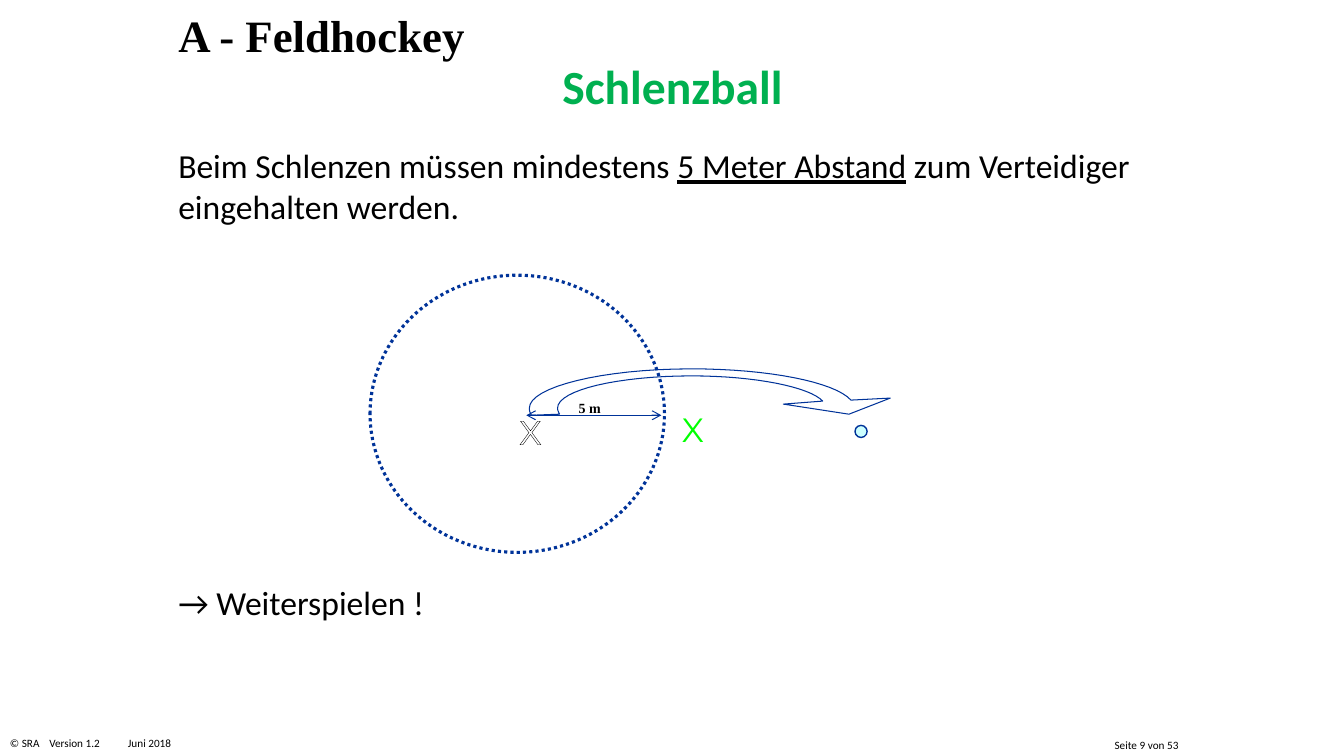
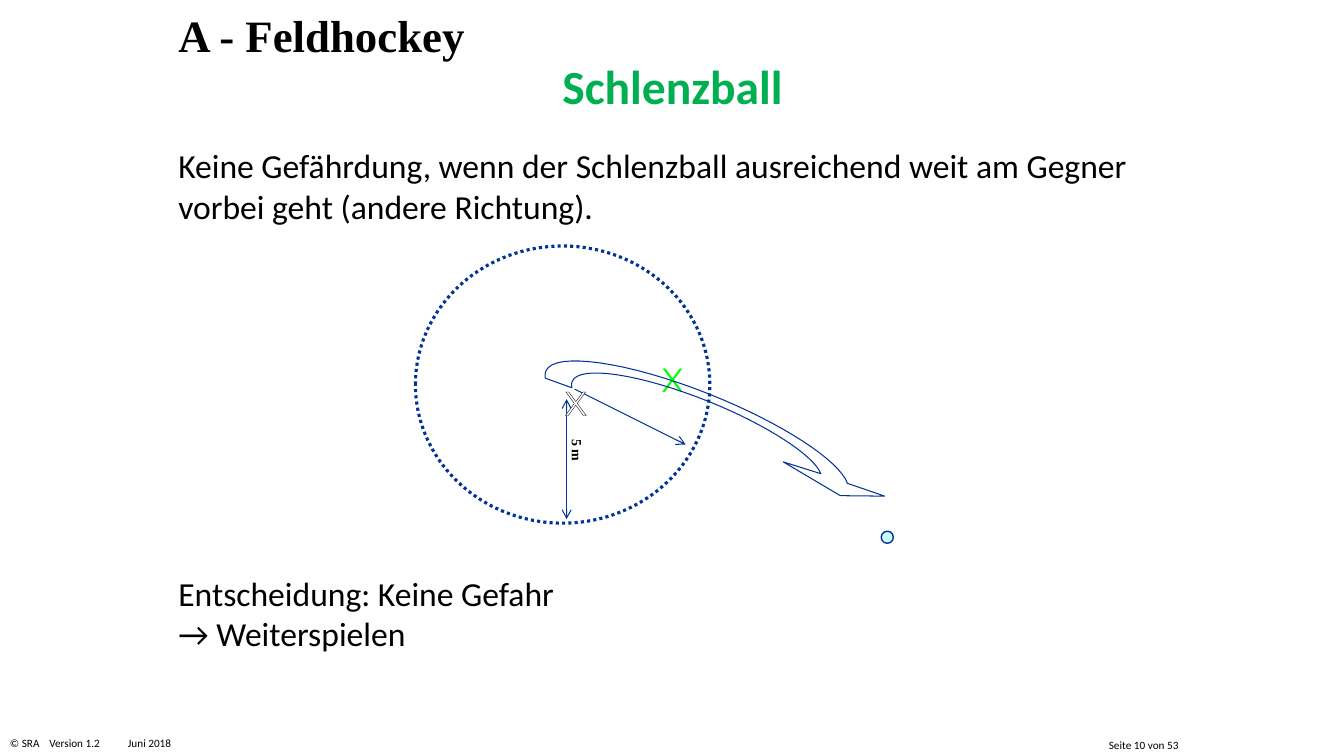
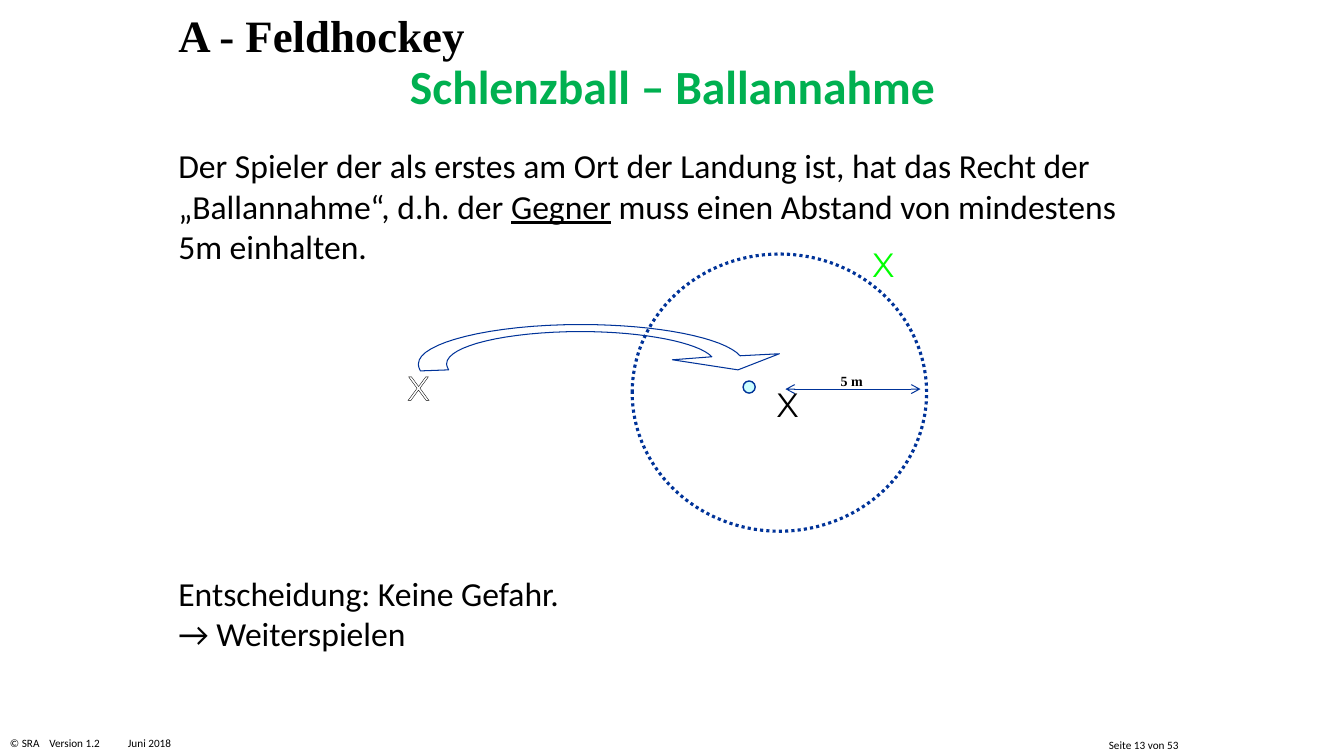
"""Build three field hockey slides about the Schlenzball rule."""
from math import cos, radians, sin

from lxml.etree import SubElement
from pptx import Presentation
from pptx.dml.color import RGBColor
from pptx.enum.dml import MSO_LINE
from pptx.enum.shapes import MSO_CONNECTOR, MSO_SHAPE
from pptx.enum.text import MSO_ANCHOR, PP_ALIGN
from pptx.oxml.ns import qn
from pptx.util import Inches, Pt

WIDTH, HEIGHT = 13.33, 7.5
LEFT, COLUMN = 1.67, 10
COLORS = {"ink": "000000", "title": "00B050", "line": "003399",
          "ball": "CCFFFF", "thrower": "FFFFFF", "opponent": "00FF00"}
STYLES = {
    "chapter": {"name": "Times New Roman", "size": 32, "bold": True, "color": "ink"},
    "title": {"name": "Calibri", "size": 34, "bold": True, "color": "title"},
    "body": {"name": "Calibri", "size": 24, "color": "ink"},
    "footer": {"name": "Calibri", "size": 8, "color": "ink"},
    "distance": {"name": "Times New Roman", "size": 10, "bold": True, "color": "ink"},
    "player": {"name": "Montserrat", "size": 24},
}
CHAPTER = "A - Feldhockey"
FOOTER = "© SRA\tVersion 1.2\tJuni 2018"
FOOTER_TABS = (0.39, 1.17)
PAGE_COUNT = 53
CIRCLE = (2.92, 2.75)
PLAYER = (0.19, 0.2)
LABEL = (0.55, 0.27)
BALL = 0.12
FLIGHT_CENTER = (1.61, 0.39)
FLIGHT_START = (2.91, 0.32)
FLIGHT = [
    (2.78, 0.18, 2.24, 0.07, 1.61, 0.07),
    (0.88, 0.07, 0.28, 0.21, 0.28, 0.39),
    (0.28, 0.41, 0.29, 0.43, 0.3, 0.45),
    (0.02, 0.46),
    (0.01, 0.44, 0, 0.42, 0, 0.39),
    (0, 0.18, 0.72, 0, 1.61, 0),
    (2.37, 0, 3.03, 0.13, 3.19, 0.31),
    (3.58, 0.29), (3.17, 0.45), (2.52, 0.35),
]
CURVE_STEPS = 16

SLIDES = [
    {"number": 9, "title": "Schlenzball",
     "rule": "Beim Schlenzen müssen mindestens _5 Meter Abstand_ zum Verteidiger "
             "eingehalten werden.",
     "decision": "→ Weiterspielen !", "decision_top": 5.72,
     "circle": (3.67, 2.73), "flight": (5.25, 3.66, 0), "ball": (8.48, 4.22),
     "players": [("thrower", 5.06, 4.03), ("opponent", 6.67, 4.01)],
     "label": (5.64, 3.91, 0),
     "arrows": [(5.22, 4.12, 6.56, 4.12, True)]},
    {"number": 10, "title": "Schlenzball",
     "rule": "Keine Gefährdung, wenn der Schlenzball ausreichend weit am Gegner "
             "vorbei geht (andere Richtung).",
     "decision": "Entscheidung: Keine Gefahr\n→ Weiterspielen", "decision_top": 5.63,
     "circle": (4.12, 2.44), "flight": (5.3, 3.89, 21.9), "ball": (8.74, 5.27),
     "players": [("thrower", 5.51, 3.74), ("opponent", 6.47, 3.51)],
     "label": (5.45, 4.4, 90),
     "arrows": [(5.62, 3.96, 5.62, 5.15, True), (5.7, 3.86, 6.8, 4.41, False)]},
    {"number": 13, "title": "Schlenzball – Ballannahme",
     "rule": "Der Spieler der als erstes am Ort der Landung ist, hat das Recht der "
             "„Ballannahme“, d.h. der _Gegner_ muss einen Abstand von mindestens "
             "5m einhalten.",
     "decision": "Entscheidung: Keine Gefahr.\n→ Weiterspielen", "decision_top": 5.63,
     "circle": (6.27, 2.52), "flight": (4.15, 3.22, 0), "ball": (7.37, 3.78),
     "players": [("thrower", 3.95, 3.59), ("ink", 7.61, 3.76), ("opponent", 8.56, 2.37)],
     "label": (8.24, 3.65, 0),
     "arrows": [(7.79, 3.86, 9.13, 3.86, True)]},
]


def rgb(name):
    return RGBColor.from_string(COLORS[name])


def set_font(font, style):
    for key, value in style.items():
        if key == "color":
            font.color.rgb = rgb(value)
        else:
            setattr(font, key, Pt(value) if key == "size" else value)


def add_text(page, text, area, style, align=PP_ALIGN.LEFT, wrap=True, tabs=()):
    box = page.shapes.add_textbox(*map(Inches, area))
    box.text_frame.word_wrap = wrap
    para = box.text_frame.paragraphs[0]
    para.alignment = align
    if tabs:
        stops = SubElement(para._p.get_or_add_pPr(), qn("a:tabLst"))
        for stop in tabs:
            SubElement(stops, qn("a:tab"), pos=str(Inches(stop)), algn="l")
    for row, line in enumerate(text.split("\n")):
        if row:
            para.add_line_break()
        for index, part in enumerate(line.split("_")):
            span = para.add_run()
            span.text = part
            set_font(span.font, STYLES[style])
            if index % 2:
                span.font.underline = True
    return box


def add_player(page, color, left, top):
    box = add_text(page, "X", (left, top, *PLAYER), "player", wrap=False)
    span = box.text_frame.paragraphs[0].runs[0]
    outline = SubElement(span._r.get_or_add_rPr(), qn("a:ln"), w=str(Pt(0.75)))
    span._r.rPr.insert(0, outline)
    fill = SubElement(outline, qn("a:solidFill"))
    SubElement(fill, qn("a:srgbClr"), val=COLORS["ink"])
    span.font.color.rgb = rgb(color)


def style_shape(shape, weight, fill=None):
    shape.shadow.inherit = False
    shape.line.color.rgb = rgb("line")
    shape.line.width = Pt(weight)
    if fill:
        shape.fill.solid()
        shape.fill.fore_color.rgb = rgb(fill)
    else:
        shape.fill.background()
    return shape


def add_oval(page, left, top, width, height, weight, fill=None):
    oval = page.shapes.add_shape(MSO_SHAPE.OVAL, *map(Inches, (left, top, width, height)))
    return style_shape(oval, weight, fill)


def add_arrow(page, x1, y1, x2, y2, both):
    arrow = page.shapes.add_connector(MSO_CONNECTOR.STRAIGHT, *map(Inches, (x1, y1, x2, y2)))
    arrow.line.color.rgb = rgb("line")
    arrow.line.width = Pt(0.75)
    for end in ("headEnd", "tailEnd") if both else ("tailEnd",):
        SubElement(arrow.line._get_or_add_ln(), qn(f"a:{end}"), type="arrow")
    SubElement(arrow._element.spPr, qn("a:effectLst"))


def flight_points():
    points = [FLIGHT_START]
    for segment in FLIGHT:
        if len(segment) == 2:
            points.append(segment)
            continue
        controls = [points[-1], segment[:2], segment[2:4], segment[4:]]
        for step in range(1, CURVE_STEPS + 1):
            t = step / CURVE_STEPS
            weights = ((1 - t) ** 3, 3 * t * (1 - t) ** 2, 3 * t * t * (1 - t), t ** 3)
            points.append(tuple(sum(w * c[axis] for w, c in zip(weights, controls))
                                for axis in (0, 1)))
    return points


def add_flight(page, left, top, angle):
    turn = radians(angle)
    center_x, center_y = FLIGHT_CENTER
    points = []
    for x, y in flight_points():
        dx, dy = x - center_x, y - center_y
        points.append((Inches(left + center_x + dx * cos(turn) - dy * sin(turn)),
                       Inches(top + center_y + dx * sin(turn) + dy * cos(turn))))
    builder = page.shapes.build_freeform(*points[0])
    builder.add_line_segments(points[1:], close=True)
    style_shape(builder.convert_to_shape(), 0.75)


def add_frame(page, content):
    add_text(page, FOOTER, (0, 7.26, 1.81, 0.24), "footer", wrap=False, tabs=FOOTER_TABS)
    number = add_text(page, f"Seite {content['number']} von {PAGE_COUNT}",
                      (10.38, 7.29, 1.39, 0.21), "footer", PP_ALIGN.RIGHT)
    frame = number.text_frame
    frame.vertical_anchor = MSO_ANCHOR.MIDDLE
    frame.margin_left = frame.margin_right = Inches(0.08)
    frame.margin_top = frame.margin_bottom = Inches(0.04)
    add_text(page, CHAPTER, (LEFT, 0.03, COLUMN, 0.64), "chapter")
    add_text(page, content["title"], (LEFT, 0.52, COLUMN, 0.67), "title", PP_ALIGN.CENTER)


def add_diagram(page, content):
    circle = add_oval(page, *content["circle"], *CIRCLE, 2.25)
    circle.line.dash_style = MSO_LINE.ROUND_DOT
    for arrow in content["arrows"]:
        add_arrow(page, *arrow)
    left, top, angle = content["label"]
    add_text(page, "5 m", (left, top, *LABEL), "distance").rotation = angle
    for player in content["players"]:
        add_player(page, *player)
    add_flight(page, *content["flight"])
    add_oval(page, *content["ball"], BALL, BALL, 1, "ball")


def main():
    deck = Presentation()
    deck.slide_width, deck.slide_height = Inches(WIDTH), Inches(HEIGHT)
    for content in SLIDES:
        page = deck.slides.add_slide(deck.slide_layouts[6])
        add_frame(page, content)
        add_text(page, content["rule"], (LEFT, 1.39, COLUMN, 0.91), "body")
        add_text(page, content["decision"], (LEFT, content["decision_top"], COLUMN, 0.91), "body")
        add_diagram(page, content)
    deck.save("out.pptx")


if __name__ == "__main__":
    main()
